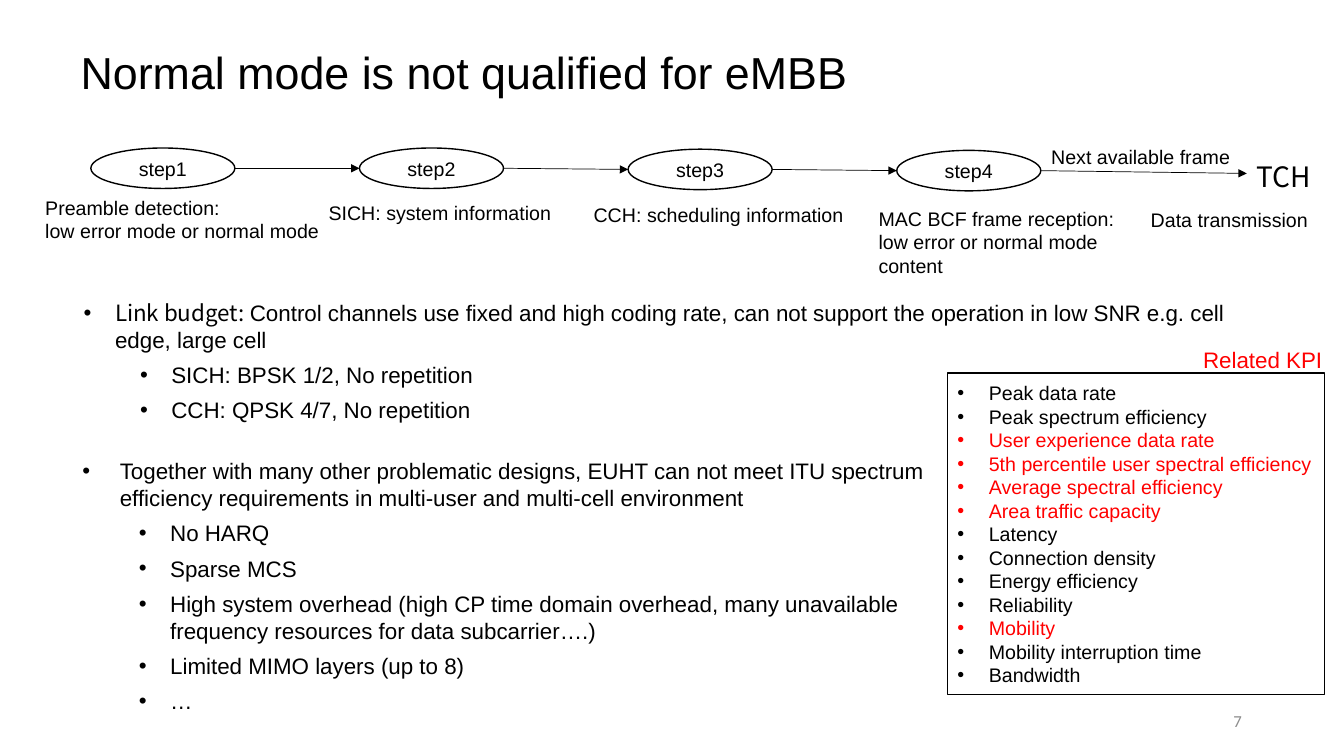
from lxml.etree import SubElement
from pptx import Presentation
from pptx.dml.color import RGBColor
from pptx.enum.shapes import MSO_CONNECTOR as Connector, MSO_SHAPE as Shape
from pptx.enum.text import MSO_ANCHOR as Anchor, MSO_AUTO_SIZE as AutoSize, PP_ALIGN as Align
from pptx.oxml.ns import qn
from pptx.util import Cm, Pt

# Content
COLORS = {"ink": "000000", "key": "FF0000", "number": "8C8C8C"}
CJK = "Noto Sans CJK SC"
TITLE = "Normal mode is not qualified for eMBB"

# Steps: name, top in cm
STEPS = [("step1", 3.73), ("step2", 3.73), ("step3", 3.76), ("step4", 3.79)]

# Captions: lines, (left, top, width, height) in cm, wrap
CAPTIONS = [
    (["Preamble detection:", "low error mode or normal mode"], (0.89, 4.8, 7.57, 1.45), False),
    (["SICH: system information"], (8.03, 4.95, 6.15, 0.86), False),
    (["CCH: scheduling information"], (14.71, 4.98, 6.83, 0.86), False),
    (["MAC BCF frame reception:", "low error or normal mode content"], (21.89, 5.08, 6.86, 2.06), True),
    (["Data transmission"], (28.75, 5.11, 4.5, 0.86), False),
    (["Next available frame"], (26.24, 3.53, 5.05, 0.86), False),
]

# Bullets: level, text
LINK_LEAD = "Link budget: "
LINK_BUDGET = [
    (0, "Control channels use fixed and high coding rate, can not support the "
        "operation in low SNR e.g. cell edge, large cell"),
    (1, "SICH: BPSK 1/2, No repetition"),
    (1, "CCH: QPSK 4/7, No repetition"),
]
PROBLEMS = [
    (0, "Together with many other problematic designs, EUHT can not meet ITU spectrum "
        "efficiency requirements in multi-user and multi-cell environment"),
    (1, "No HARQ"),
    (1, "Sparse MCS"),
    (1, "High system overhead (high CP time domain overhead, many unavailable "
        "frequency resources for data subcarrier….)"),
    (1, "Limited MIMO layers (up to 8)"),
    (1, "…"),
]

# KPIs: name, color
KPIS = [
    ("Peak data rate", "ink"),
    ("Peak spectrum efficiency", "ink"),
    ("User experience data rate", "key"),
    ("5th percentile user spectral efficiency", "key"),
    ("Average spectral efficiency", "key"),
    ("Area traffic capacity", "key"),
    ("Latency", "ink"),
    ("Connection density", "ink"),
    ("Energy efficiency", "ink"),
    ("Reliability", "ink"),
    ("Mobility", "key"),
    ("Mobility interruption time", "ink"),
    ("Bandwidth", "ink"),
]

# Layout in cm
STEP_LEFT, STEP_PITCH, STEP_WIDTH, STEP_HEIGHT = 2.29, 6.77, 3.63, 1.02
LAST_ARROW_END = (31.42, 4.37)
SUB_INDENT = (2.26, 0.79)  # text position, hanging width

deck = Presentation()
deck.slide_width, deck.slide_height = Cm(33.87), Cm(19.05)
page = deck.slides.add_slide(deck.slide_layouts[5])


def color(name):
    return RGBColor.from_string(COLORS[name])


def write(para, text, size=14, font="Arial", ink="ink", align=Align.LEFT,
          bullet=None, level=0, before=0, line=None):
    """Add a run to a paragraph; bullet is (text position, hanging width) in cm."""
    span = para.add_run()
    span.text = text
    span.font.size, span.font.name = Pt(size), font
    span.font.color.rgb = color(ink)
    para.alignment, para.level, para.space_before = align, level, Pt(before)
    if line:
        para.line_spacing = Pt(line)
    props = para._p.get_or_add_pPr()
    if bullet and props.find(qn("a:buChar")) is None:
        props.set("marL", str(Cm(bullet[0])))
        props.set("indent", str(-Cm(bullet[1])))
        SubElement(props, qn("a:buFont"), typeface="Arial")
        SubElement(props, qn("a:buChar"), char="•")


def next_para(frame):
    """Return the empty first paragraph, or a new one."""
    first = frame.paragraphs[0]
    return frame.add_paragraph() if first.runs else first


def set_insets(frame, left=0, top=0):
    frame.margin_left, frame.margin_top = Cm(left), Cm(top)
    frame.margin_right = frame.margin_bottom = 0


def text_frame(place, wrap=True, grow=False):
    frame = page.shapes.add_textbox(*map(Cm, place)).text_frame
    frame.word_wrap = wrap
    if grow:
        frame.auto_size = AutoSize.SHAPE_TO_FIT_TEXT
    return frame


def outlined(kind, place, weight):
    box = page.shapes.add_shape(kind, *map(Cm, place))
    box.shadow.inherit = False
    box.fill.background()
    box.line.color.rgb, box.line.width = color("ink"), Pt(weight)
    box.text_frame.word_wrap = True
    return box


def add_arrow(start, end):
    arrow = page.shapes.add_connector(Connector.STRAIGHT, *map(Cm, start + end))
    arrow.line.color.rgb, arrow.line.width = color("ink"), Pt(0.5)
    SubElement(arrow.line._get_or_add_ln(), qn("a:tailEnd"), type="triangle")
    SubElement(arrow._element.spPr, qn("a:effectLst"))


def add_bullets(frame, items, main_indent, lead=None):
    for level, text in items:
        para = next_para(frame)
        look = dict(size=16, before=6, level=level,
                    bullet=SUB_INDENT if level else main_indent)
        if lead and level == 0:
            write(para, lead, font=CJK, **look)
        write(para, text, **look)


# Title
title = page.shapes.title
title.left, title.top, title.width, title.height = map(Cm, (2.03, 1.27, 29.82, 2.77))
set_insets(title.text_frame)
title.text_frame.vertical_anchor = Anchor.TOP
title.text_frame.auto_size = AutoSize.NONE
write(title.text_frame.paragraphs[0], TITLE, size=32, line=34.3)

# Step ellipses
for index, (name, top) in enumerate(STEPS):
    step = outlined(Shape.OVAL, (STEP_LEFT + index * STEP_PITCH, top, STEP_WIDTH, STEP_HEIGHT), 1)
    step.text_frame.vertical_anchor = Anchor.MIDDLE
    write(step.text_frame.paragraphs[0], name, align=Align.CENTER)

# Arrows between steps and on to TCH
entries = [(STEP_LEFT + index * STEP_PITCH, top + STEP_HEIGHT / 2)
           for index, (_, top) in enumerate(STEPS)]
for (left, middle), target in zip(entries, entries[1:] + [LAST_ARROW_END]):
    add_arrow((left + STEP_WIDTH, middle), target)

# Captions and TCH
for lines, place, wrap in CAPTIONS:
    frame = text_frame(place, wrap, grow=True)
    for line in lines:
        write(next_para(frame), line)
write(text_frame((31.42, 3.53, 2.13, 1.47), wrap=False, grow=True).paragraphs[0],
      "TCH", size=20, font=CJK, line=34.4)

# Bullet lists
link_frame = text_frame((2.06, 7.54, 29.79, 3.86))
set_insets(link_frame)
add_bullets(link_frame, LINK_BUDGET, (0.84, 0.79), lead=LINK_LEAD)
add_bullets(text_frame((1.78, 11.4, 22.05, 6.78), grow=True), PROBLEMS, (0.99, 0.94))

# KPI box with heading
kpi_box = outlined(Shape.RECTANGLE, (23.88, 9.4, 9.5, 8.1), 0.75)
set_insets(kpi_box.text_frame, 0.2, 0.2)
kpi_box.text_frame.vertical_anchor = Anchor.TOP
for name, ink in KPIS:
    write(next_para(kpi_box.text_frame), name, ink=ink, bullet=(0.84, 0.79))
write(text_frame((30.07, 8.61, 3.56, 0.94), wrap=False, grow=True).paragraphs[0],
      "Related KPI", size=16, ink="key")

# Page number
number_frame = text_frame((23.93, 17.65, 7.62, 1.02))
number_frame.vertical_anchor = Anchor.MIDDLE
write(number_frame.paragraphs[0], "7", size=12, font="Calibri", ink="number", align=Align.RIGHT)

deck.save("out.pptx")
